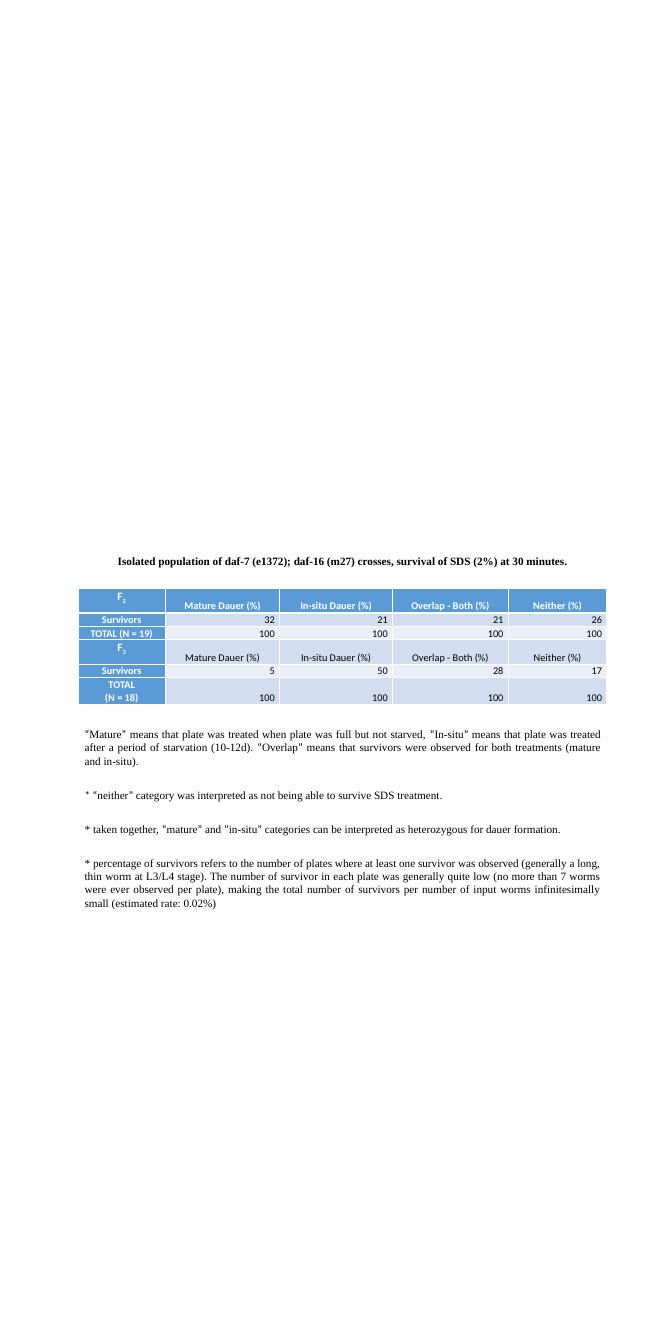
"""Build the slide on dauer survival: a heading, one table and four notes."""
from dataclasses import dataclass
from itertools import groupby

from lxml import etree
from pptx import Presentation, util as u
from pptx.dml import color as c
from pptx.enum import text as t
from pptx.oxml import ns

SERIF, SANS = "Times New Roman", "Calibri"
BLUE, WHITE, BLACK = "5B9BD5", "FFFFFF", "000000"
BANDS = ("EAEFF7", "D2DEEF")
LEFT, WIDTH = u.Cm(2.95), u.Cm(20.02)
COLS = (3.3, 4.32, 4.27, 4.37, 3.73)
HEADS = ("Mature Dauer (%)", "In-situ Dauer (%)", "Overlap - Both (%)", "Neither (%)")
FULL = ("100",) * 4


@dataclass
class Row:
    label: str
    cells: tuple[str, ...]
    high: float = 0.51
    sub: str = ""


@dataclass
class Note:
    body: str
    lead: str = ""


ROWS = (
    Row("F", HEADS, 0.91, "2"),
    Row("Survivors", ("32", "21", "21", "26")),
    Row("TOTAL (N = 19)", FULL),
    Row("F", HEADS, 0.91, "3"),
    Row("Survivors", ("5", "50", "28", "17")),
    Row("TOTAL\n(N = 18)", FULL, 1.02),
)

NOTES = (
    Note("“Mature” means that plate was treated when plate was full but not starved, "
         "“In-situ” means that plate was treated after a period of starvation (10-12d). "
         "“Overlap” means that survivors were observed for both treatments (mature and in-situ)."),
    Note("“neither” category was interpreted as not being able to survive SDS treatment.", "* "),
    Note("* taken together, “mature” and “in-situ” categories can be interpreted "
         "as heterozygous for dauer formation."),
    Note("* percentage of survivors refers to the number of plates where at least one survivor "
         "was observed (generally a long, thin worm at L3/L4 stage). The number of survivor in "
         "each plate was generally quite low (no more than 7 worms were ever observed per plate), "
         "making the total number of survivors per number of input worms infinitesimally small "
         "(estimated rate: 0.02%)"),
)


def shade(hue: str) -> c.RGBColor:
    return c.RGBColor.from_string(hue)


def add_run(para, words: str, face: str, size: float = 12, hue: str = BLACK,
            bold: bool = False, sub: bool = False) -> None:
    run = para.add_run()
    run.text = words
    font = run.font
    font.name, font.size, font.bold = face, u.Pt(size), bold
    font.color.rgb = shade(hue)
    if sub:
        run._r.get_or_add_rPr().set("baseline", "-25000")


def add_edge(cell, side: str, points: float) -> None:
    line = etree.SubElement(cell._tc.get_or_add_tcPr(), ns.qn(f"a:ln{side}"), w=str(u.Pt(points)))
    fill = etree.SubElement(line, ns.qn("a:solidFill"))
    etree.SubElement(fill, ns.qn("a:srgbClr"), val=WHITE)


def fill_cell(cell, words: str, row: int, col: int, sub: str) -> None:
    dark = row == 0 or col == 0
    for side in "LRTB":
        thick = (row, side) in ((0, "B"), (1, "T"))
        add_edge(cell, side, 3 if thick else 1)
    cell.fill.solid()
    cell.fill.fore_color.rgb = shade(BLUE if dark else BANDS[row % 2])
    cell.margin_left = cell.margin_right = u.Cm(0.18)
    cell.margin_top = cell.margin_bottom = u.Cm(0)
    cell.vertical_anchor = t.MSO_ANCHOR.TOP if sub else t.MSO_ANCHOR.BOTTOM
    frame = cell.text_frame
    for i, words_line in enumerate(words.split("\n")):
        para = frame.add_paragraph() if i else frame.paragraphs[0]
        para.alignment = t.PP_ALIGN.RIGHT if words.isdigit() else t.PP_ALIGN.CENTER
        para.line_spacing = 1.07
        look = (SANS, 12 if sub else 11, WHITE if dark else BLACK, dark)
        add_run(para, words_line, *look)
        if sub:
            add_run(para, sub, *look, sub=True)


def add_grid(slide) -> None:
    high = u.Cm(sum(row.high for row in ROWS))
    grid = slide.shapes.add_table(len(ROWS), len(COLS), LEFT, u.Cm(22.25), WIDTH, high).table
    grid.first_row = grid.horz_banding = False
    for col, wide in zip(grid.columns, COLS):
        col.width = u.Cm(wide)
    for i, row in enumerate(ROWS):
        grid.rows[i].height = u.Cm(row.high)
        for j, words in enumerate((row.label, *row.cells)):
            fill_cell(grid.cell(i, j), words, i, j, "" if j else row.sub)


def add_title(slide) -> None:
    title = slide.shapes.title
    title.left, title.top, title.width, title.height = LEFT, u.Cm(20.75), WIDTH, u.Cm(0.94)
    frame = title.text_frame
    frame.auto_size = t.MSO_AUTO_SIZE.NONE
    frame.vertical_anchor = t.MSO_ANCHOR.MIDDLE
    para = frame.paragraphs[0]
    para.alignment = t.PP_ALIGN.CENTER
    add_run(para, "Isolated population of daf-7 (e1372); daf-16 (m27) crosses, "
                  "survival of SDS (2%) at 30 minutes.", SERIF, bold=True)


def add_notes(slide) -> None:
    frame = slide.shapes.add_textbox(LEFT, u.Cm(27.36), WIDTH, u.Cm(7.29)).text_frame
    frame.word_wrap = True
    for i, note in enumerate(NOTES):
        para = frame.add_paragraph() if i else frame.paragraphs[0]
        para.alignment = t.PP_ALIGN.JUSTIFY
        para.space_before = u.Pt(22 if i else 0)
        if note.lead:
            add_run(para, note.lead, SANS)
        for quote, marks in groupby(note.body, lambda mark: mark in "“”"):
            add_run(para, "".join(marks), SANS if quote else SERIF)


def main() -> None:
    deck = Presentation()
    deck.slide_width, deck.slide_height = u.Cm(25.4), u.Cm(50.8)
    slide = deck.slides.add_slide(deck.slide_layouts[5])
    add_title(slide)
    add_grid(slide)
    add_notes(slide)
    deck.save("out.pptx")


if __name__ == "__main__":
    main()
